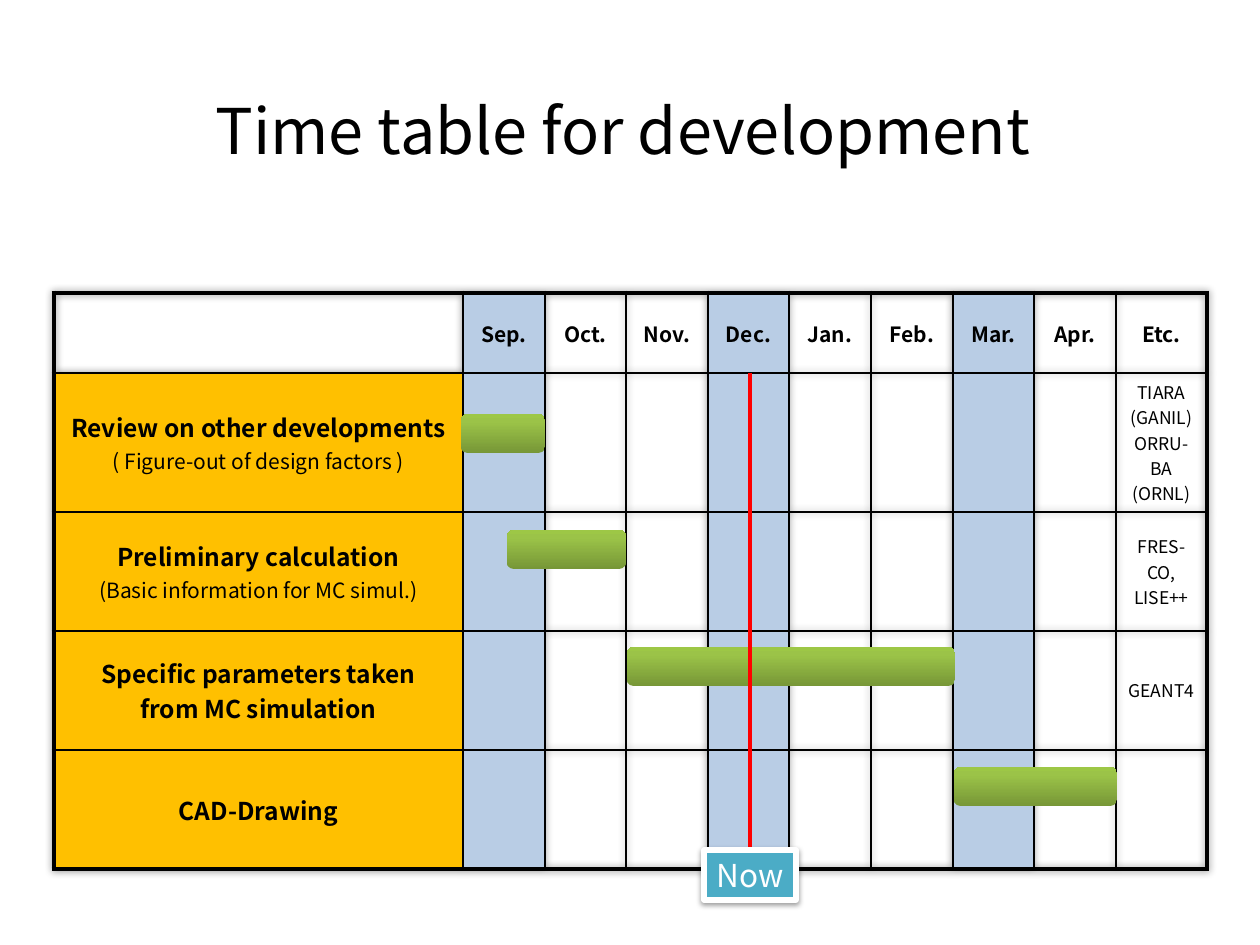
from copy import deepcopy

from lxml import etree
from pptx import Presentation
from pptx.dml.color import RGBColor
from pptx.enum.shapes import MSO_CONNECTOR, MSO_SHAPE
from pptx.enum.text import MSO_ANCHOR, MSO_AUTO_SIZE, PP_ALIGN
from pptx.oxml.ns import qn
from pptx.util import Pt

ROUNDED, RECTANGLE = MSO_SHAPE.ROUNDED_RECTANGLE, MSO_SHAPE.RECTANGLE
STRAIGHT = MSO_CONNECTOR.STRAIGHT
TOP, MIDDLE = MSO_ANCHOR.TOP, MSO_ANCHOR.MIDDLE
LEFT, CENTER = PP_ALIGN.LEFT, PP_ALIGN.CENTER
FIT_SHAPE = MSO_AUTO_SIZE.SHAPE_TO_FIT_TEXT

EMU_PER_PX = 914400 / 126
FONT = "Noto Sans CJK KR"
BLACK, WHITE, RED = "000000", "FFFFFF", "FF0000"
SHADED_MONTH, TASK_FILL, NOW_FILL = "B9CDE5", "FFC000", "4BACC6"
BAR_STOPS = [(0, "779737"), (0.8, "9BC348"), (1, "9DC746")]

# Table grid; the first task row is taller to hold five lines of remarks
TABLE_LEFT, TABLE_TOP = 54, 293
TASK_WIDTH, MONTHS_WIDTH, ETC_WIDTH = 409, 653, 91
HEADER_HEIGHT, FIRST_TASK_HEIGHT, TASK_HEIGHT = 80, 139, 119
MONTHS = ["Sep.", "Oct.", "Nov.", "Dec.", "Jan.", "Feb.", "Mar.", "Apr."]
SHADED_COLUMNS = {1, 4, 7}

# Each task: lines as (text, size, bold), then the lines of its last column
TASKS = [
    ([("Review on other developments", 14, True),
      ("( Figure-out of design factors )", 12, False)],
     ["TIARA", "(GANIL)", "ORRU-BA", "(ORNL)"]),
    ([("Preliminary calculation", 14, True),
      ("(Basic information for MC simul.)", 12, False)],
     ["FRES-CO,", "LISE++"]),
    ([("Specific parameters taken", 14, True),
      ("from MC simulation", 14, True)],
     ["GEANT4"]),
    ([("CAD-Drawing", 14, True)], []),
]

# Task bars: left, top, width
BARS = [(461, 414, 84), (507, 530, 119), (627, 647, 328), (954, 767, 163)]
BAR_HEIGHT = 39


def px(*lengths):
    return [round(length * EMU_PER_PX) for length in lengths]


def rgb(color):
    return RGBColor.from_string(color)


def write(frame, lines, align, color=BLACK):
    for index, (text, size, bold) in enumerate(lines):
        paragraph = frame.add_paragraph() if index else frame.paragraphs[0]
        paragraph.alignment = align
        run = paragraph.add_run()
        run.text = text
        run.font.color.rgb = rgb(color)
        style = {"name": FONT, "size": Pt(size), "bold": bold}
        for attribute, value in style.items():
            setattr(run.font, attribute, value)


def set_format(target, **values):
    for attribute, value in values.items():
        setattr(target, attribute, value)


def add_shadow(parent, index, blur, distance, opacity):
    """Put a downward outer shadow (points, percent) into the parent."""
    effects = etree.Element(qn("a:effectLst"))
    shadow = etree.SubElement(
        effects, qn("a:outerShdw"), blurRad=str(Pt(blur)),
        dist=str(Pt(distance)), dir="5400000", algn="ctr", rotWithShape="0")
    color = etree.SubElement(shadow, qn("a:srgbClr"), val=BLACK)
    etree.SubElement(color, qn("a:alpha"), val=str(opacity * 1000))
    parent.insert(index, effects)


def set_borders(cell, widths):
    properties = cell._tc.get_or_add_tcPr()
    for index, (side, width) in enumerate(widths.items()):
        line = etree.Element(qn(f"a:ln{side}"), w=str(Pt(width)))
        fill = etree.SubElement(line, qn("a:solidFill"))
        etree.SubElement(fill, qn("a:srgbClr"), val=BLACK)
        properties.insert(index, line)


def fill_cell(cell, color):
    if color:
        cell.fill.solid()
        cell.fill.fore_color.rgb = rgb(color)
    else:
        cell.fill.background()


def add_title(slide):
    title = slide.shapes.title
    title.left, title.top, title.width, title.height = px(203, 85, 871, 89)
    set_format(title.text_frame, word_wrap=False, auto_size=FIT_SHAPE,
               vertical_anchor=TOP)
    write(title.text_frame, [("Time table for development", 36, False)], LEFT)


def add_schedule(slide):
    edges = [round(MONTHS_WIDTH * i / len(MONTHS))
             for i in range(len(MONTHS) + 1)]
    month_widths = [right - left for left, right in zip(edges, edges[1:])]
    widths = [TASK_WIDTH, *month_widths, ETC_WIDTH]
    heights = [HEADER_HEIGHT, FIRST_TASK_HEIGHT]
    heights += [TASK_HEIGHT] * (len(TASKS) - 1)
    table = slide.shapes.add_table(
        len(heights), len(widths),
        *px(TABLE_LEFT, TABLE_TOP, sum(widths), sum(heights))).table
    set_format(table, first_row=False, horz_banding=False)
    add_shadow(table._tbl.tblPr, 0, blur=4, distance=0, opacity=40)
    for column, width in zip(table.columns, px(*widths)):
        column.width = width
    for row, height in zip(table.rows, px(*heights)):
        row.height = height

    # Fills and borders, heavier around the outside
    last_row, last_column = len(heights) - 1, len(widths) - 1
    for r in range(len(heights)):
        for c in range(len(widths)):
            cell = table.cell(r, c)
            cell.vertical_anchor = MIDDLE
            task_fill = TASK_FILL if r and c == 0 else None
            fill_cell(cell, SHADED_MONTH if c in SHADED_COLUMNS else task_fill)
            outside = {"L": c == 0, "R": c == last_column,
                       "T": r == 0, "B": r == last_row}
            set_borders(cell, {side: 3 if outer else 1
                               for side, outer in outside.items()})

    # Wording
    for c, heading in enumerate(MONTHS + ["Etc."], start=1):
        write(table.cell(0, c).text_frame, [(heading, 12, True)], CENTER)
    for r, (task, remarks) in enumerate(TASKS, start=1):
        write(table.cell(r, 0).text_frame, task, CENTER)
        write(table.cell(r, last_column).text_frame,
              [(remark, 10, False) for remark in remarks], CENTER)


def add_bar(slide, left, top, width):
    bar = slide.shapes.add_shape(ROUNDED, *px(left, top, width, BAR_HEIGHT))
    bar.shadow.inherit = False
    bar.line.fill.background()
    bar.fill.gradient()
    bar.fill.gradient_angle = 90
    stop_list = bar._element.spPr.find(qn("a:gradFill")).find(qn("a:gsLst"))
    stop_list.insert(1, deepcopy(stop_list[0]))
    for stop, (position, color) in zip(bar.fill.gradient_stops, BAR_STOPS):
        stop.position = position
        stop.color.rgb = rgb(color)


def add_now_marker(slide):
    now_line = slide.shapes.add_connector(STRAIGHT, *px(750, 373, 750, 849))
    now_line.line.color.rgb = rgb(RED)
    now_line.line.width = Pt(2.25)
    etree.SubElement(now_line._element.spPr, qn("a:effectLst"))

    now = slide.shapes.add_shape(RECTANGLE, *px(704, 850, 92, 50))
    now.fill.solid()
    now.fill.fore_color.rgb = rgb(NOW_FILL)
    now.line.color.rgb = rgb(WHITE)
    now.line.width = Pt(3)
    properties = now._element.spPr
    add_shadow(properties, len(properties), blur=3.1, distance=1.6, opacity=38)
    set_format(now.text_frame, word_wrap=False, auto_size=FIT_SHAPE,
               vertical_anchor=TOP)
    write(now.text_frame, [("Now", 18, False)], LEFT, WHITE)


def main():
    presentation = Presentation()
    presentation.slide_width, presentation.slide_height = px(1260, 945)
    slide = presentation.slides.add_slide(presentation.slide_layouts[5])
    add_title(slide)
    add_schedule(slide)
    for bar in BARS:
        add_bar(slide, *bar)
    add_now_marker(slide)
    presentation.save("out.pptx")


if __name__ == "__main__":
    main()
